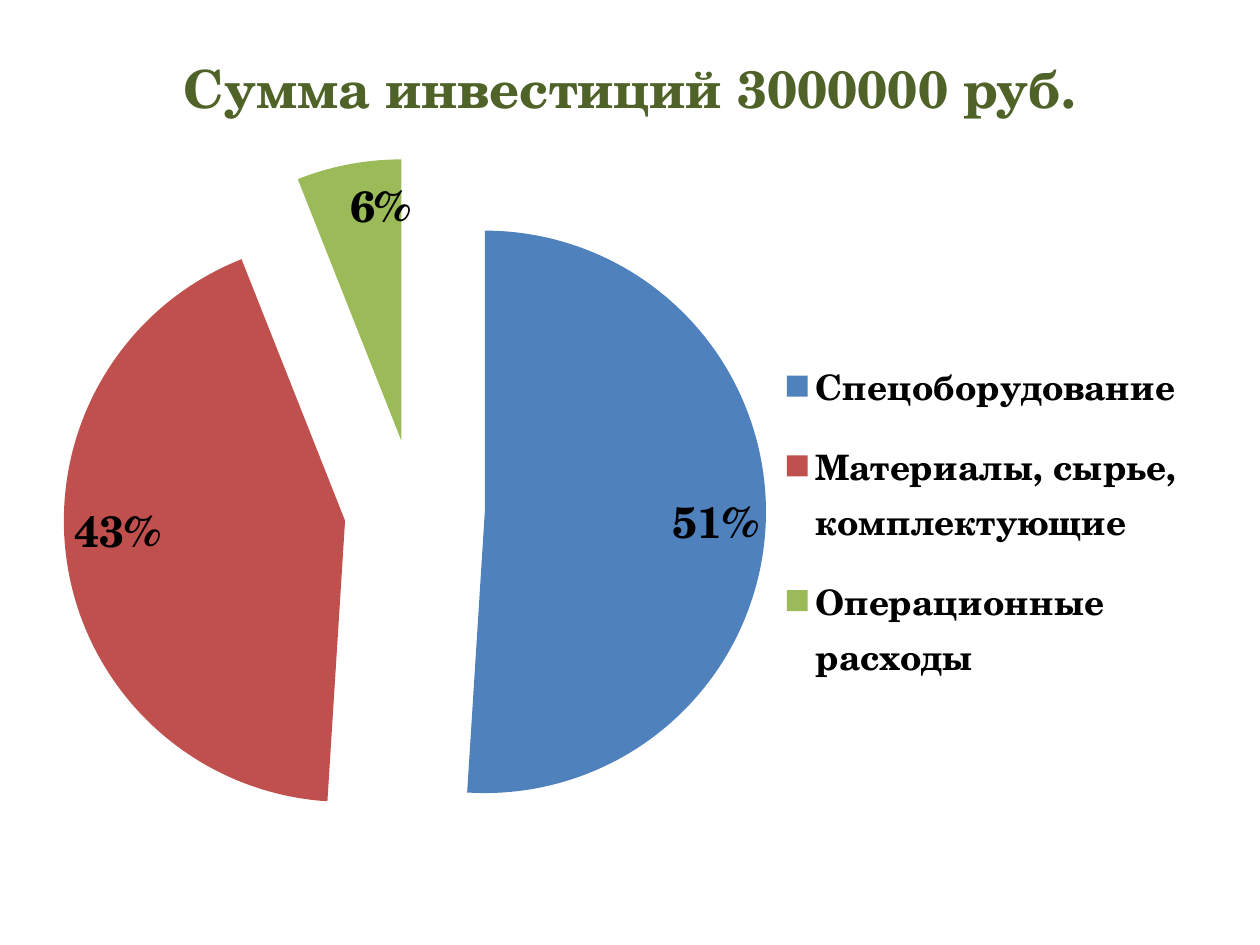
from lxml.etree import SubElement
from pptx import Presentation
from pptx.chart.data import CategoryChartData as Data
from pptx.dml.color import RGBColor
from pptx.enum.chart import XL_CHART_TYPE as Kind
from pptx.enum.chart import XL_LABEL_POSITION as Spot
from pptx.enum.chart import XL_LEGEND_POSITION as Side
from pptx.enum.text import MSO_ANCHOR as Anchor
from pptx.enum.text import PP_ALIGN as Align
from pptx.oxml import parse_xml
from pptx.oxml.ns import nsdecls, qn
from pptx.util import Pt

PX = 914400 // 126
FACE = "TeX Gyre Schola"
BLACK = RGBColor(0x00, 0x00, 0x00)
OLIVE = RGBColor(0x4F, 0x62, 0x28)
BLUE = RGBColor(0x4F, 0x81, 0xBD)
RED = RGBColor(0xC0, 0x50, 0x4D)
GREEN = RGBColor(0x9B, 0xBB, 0x59)

COSTS = [
    ("Спецоборудование", 51, BLUE),
    ("Материалы, сырье, комплектующие", 43, RED),
    ("Операционные расходы", 6, GREEN),
]


def style(font, size, color=BLACK):
    font.name = FACE
    font.size = Pt(size)
    font.bold = True
    font.color.rgb = color


def add_text(slide, text, box, size=18, color=BLACK, align=Align.LEFT):
    frame = slide.shapes.add_textbox(*(n * PX for n in box)).text_frame
    frame.word_wrap = True
    frame.vertical_anchor = Anchor.MIDDLE
    para = frame.paragraphs[0]
    para.alignment = align
    run = para.add_run()
    run.text = text
    style(run.font, size, color)


def make_layout(x, y, w, h, inner=False):
    layout = parse_xml(f"<c:layout {nsdecls('c')}/>")
    manual = SubElement(layout, qn("c:manualLayout"))
    parts = [("layoutTarget", "inner")] if inner else []
    parts += [("xMode", "edge"), ("yMode", "edge")]
    parts += [("x", x), ("y", y), ("w", w), ("h", h)]
    for tag, val in parts:
        SubElement(manual, qn(f"c:{tag}")).set("val", str(val))
    return layout


def set_layout(parent, place, layout):
    for old in parent.findall(qn("c:layout")):
        parent.remove(old)
    parent.insert(place, layout)


def add_pie(slide, rows, box):
    data = Data()
    data.categories = [name for name, _, _ in rows]
    data.add_series("Series 1", [val for _, val, _ in rows])
    frame = slide.shapes.add_chart(Kind.PIE, *(n * PX for n in box), data)
    chart = frame.chart
    chart.has_title = False
    chart.font.name = "Calibri"
    chart.font.size = Pt(18)
    chart.font.color.rgb = BLACK

    plot = chart.plots[0]
    plot.vary_by_categories = True
    series = plot.series[0]
    for i, (_, _, color) in enumerate(rows):
        fill = series.points[i].format.fill
        fill.solid()
        fill.fore_color.rgb = color
    burst = parse_xml(f'<c:explosion {nsdecls("c")} val="25"/>')
    series._element.find(qn("c:dPt")).addprevious(burst)

    labels = series.data_labels
    labels.show_percentage = True
    labels.show_value = False
    labels.position = Spot.INSIDE_END
    style(labels.font, 25)

    chart.has_legend = True
    legend = chart.legend
    legend.position = Side.RIGHT
    legend.include_in_layout = False
    style(legend.font, 20)
    set_layout(legend._element, 1, make_layout(0.63, 0.25, 0.36, 0.5))
    area = chart._chartSpace.chart.plotArea
    set_layout(area, 0, make_layout(0, 0.01, 0.62, 0.95, inner=True))


def main():
    deck = Presentation()
    deck.slide_width = 1260 * PX
    deck.slide_height = 945 * PX
    slide = deck.slides.add_slide(deck.slide_layouts[6])
    add_text(slide, "Сумма инвестиций 3000000 руб.", (63, 38, 1134, 100),
             size=30, color=OLIVE, align=Align.CENTER)
    add_pie(slide, COSTS, (63, 147, 1134, 748))
    deck.save("out.pptx")


if __name__ == "__main__":
    main()
